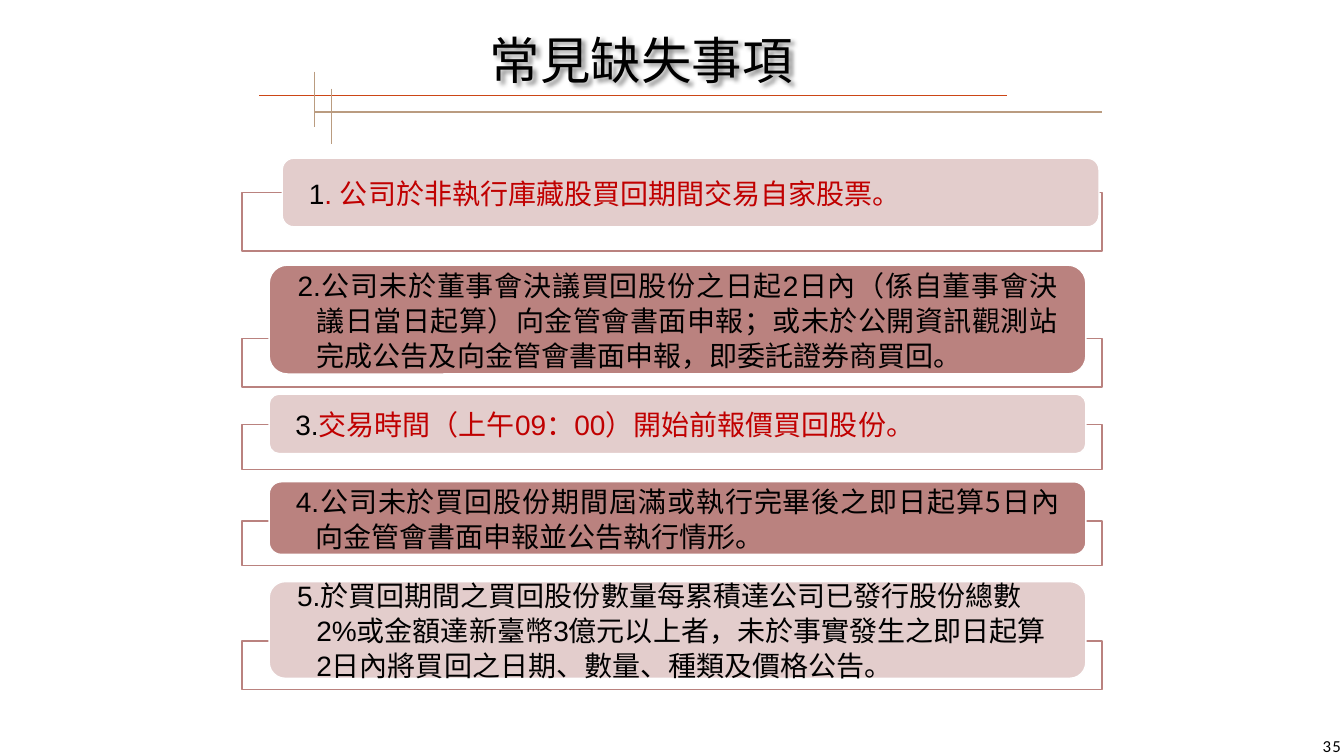
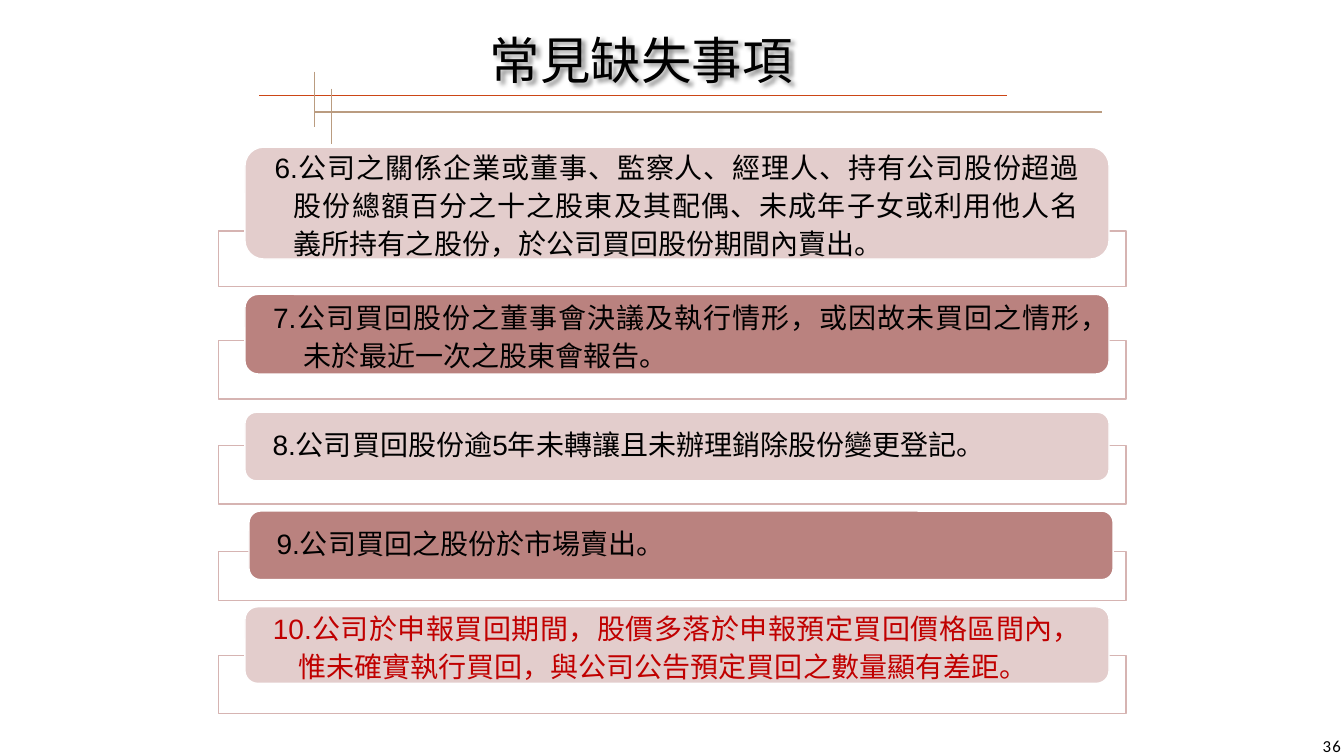
from dataclasses import dataclass
from typing import NamedTuple

from lxml import etree
from pptx import Presentation
from pptx import util as u
from pptx.dml.color import RGBColor
from pptx.enum import shapes, text
from pptx.oxml import ns

BLACK = RGBColor(0x00, 0x00, 0x00)
WHITE = RGBColor(0xFF, 0xFF, 0xFF)
RED = RGBColor(0xC0, 0x00, 0x00)
ROSE = RGBColor(0xBA, 0x82, 0x7F)
PALE_ROSE = RGBColor(0xE3, 0xCD, 0xCC)
FRAME_ROSE = RGBColor(0xD6, 0xB4, 0xB2)
TAN = RGBColor(0xBA, 0x9C, 0x80)
RUST = RGBColor(0xCC, 0x46, 0x16)

LATIN_FONT = "Arial"
TITLE_FONT = "Noto Sans CJK SC"
ASIAN_FONT = "Noto Sans CJK TC"
TITLE = "常見缺失事項"
JUSTIFY = text.PP_ALIGN.JUSTIFY
LEFT = text.PP_ALIGN.LEFT


class Span(NamedTuple):
    words: str
    color: RGBColor = BLACK
    font: str = LATIN_FONT


class Rule(NamedTuple):
    start: tuple[float, float]
    end: tuple[float, float]
    color: RGBColor


@dataclass(frozen=True)
class Item:
    """One fault: a rounded box in front of an outlined frame."""
    frame_top: float
    frame_height: float
    top: float
    height: float
    spans: tuple[Span, ...]
    shift: float = 0
    hang: float = 0.19
    align: text.PP_ALIGN = JUSTIFY
    leading: float | None = None


@dataclass(frozen=True)
class Sheet:
    number: int
    frame_left: float
    frame_width: float
    frame_color: RGBColor
    box_left: float
    box_width: float
    inset: float
    leading: u.Length
    items: tuple[Item, ...]


# Crossed lines under every title
RULES = (
    Rule((3.12, 1.11), (10.93, 1.11), TAN),
    Rule((2.57, 0.95), (9.99, 0.95), RUST),
    Rule((3.12, 0.71), (3.12, 1.26), TAN),
    Rule((3.29, 0.88), (3.29, 1.43), TAN),
)

SHEETS = (
    Sheet(35, 2.4, 8.53, ROSE, 2.67, 8.1, 0.23, u.Pt(25), (
        Item(1.91, 0.58, 1.57, 0.68, (
            Span("1"), Span(". 公司於非執行庫藏股買回期間交易自家股票。", RED)),
            shift=0.13),
        Item(3.36, 0.48, 2.63, 1.08, (
            Span("2.公司未於董事會決議買回股份之日起2日內（係自董事會決議日當日起算）"
                 "向金管會書面申報；或未於公開資訊觀測站完成公告及向金管會書面申報，"
                 "即委託證券商買回。"),)),
        Item(4.21, 0.45, 3.91, 0.59, (
            Span("3."), Span("交易時間（上午09：00）開始前報價買回股份。", RED))),
        Item(5.17, 0.44, 4.78, 0.72, (
            Span("4."),
            Span("公司未於買回股份期間屆滿或執行完畢後之即日起算5日內"
                 "向金管會書面申報並公告執行情形。", font=TITLE_FONT))),
        Item(6.36, 0.48, 5.77, 0.96, (
            Span("5.於買回期間之買回股份數量每累積達公司已發行股份總數2%或金額達"
                 "新臺幣3億元以上者，未於事實發生之即日起算2日內將買回之日期、數量、"
                 "種類及價格公告。"),), align=LEFT),
    )),
    Sheet(36, 2.17, 9, FRAME_ROSE, 2.43, 8.57, 0.24, u.Pt(27), (
        Item(2.29, 0.55, 1.46, 1.11, (
            Span("6.公司之關係企業或董事、監察人、經理人、持有公司股份超過股份總額"
                 "百分之十之股東及其配偶、未成年子女或利用他人名義所持有之股份，"
                 "於公司買回股份期間內賣出。"),)),
        Item(3.38, 0.58, 2.92, 0.79, (
            Span("7.公司買回股份之董事會決議及執行情形，或因故未買回之情形，"
                 "未於最近一次之股東會報告。"),), hang=0.3),
        Item(4.42, 0.58, 4.09, 0.68, (
            Span("8.公司買回股份逾5年未轉讓且未辦理銷除股份變更登記。"),),
            hang=0, align=LEFT, leading=0.9),
        Item(5.47, 0.49, 5.07, 0.68, (Span("9.公司買回之股份於市場賣出。"),),
             shift=0.04, hang=0, align=LEFT, leading=0.9),
        Item(6.5, 0.58, 6.02, 0.76, (
            Span("10.公司於申報買回期間，股價多落於申報預定買回價格區間內，"
                 "惟未確實執行買回，與公司公告預定買回之數量顯有差距。", RED),),
            hang=0.25),
    )),
)


def write(frame, spans: tuple[Span, ...], *, size: float, align: text.PP_ALIGN,
          inset: float = 0, hang: float = 0,
          leading: float | u.Length | None = None,
          asian: str = ASIAN_FONT) -> None:
    """Fill a text frame with one formatted paragraph, centred in height."""
    frame.word_wrap = True
    frame.auto_size = text.MSO_AUTO_SIZE.NONE
    frame.vertical_anchor = text.MSO_ANCHOR.MIDDLE
    frame.margin_left = frame.margin_right = u.Inches(inset)
    frame.margin_top = frame.margin_bottom = 0
    para = frame.paragraphs[0]
    para.alignment = align
    para.line_spacing = leading
    if hang:
        properties = para._p.get_or_add_pPr()
        properties.set("marL", str(u.Inches(hang)))
        properties.set("indent", str(-u.Inches(hang)))
    for words, color, font in spans:
        span = para.add_run()
        span.text = words
        span.font.size = u.Pt(size)
        span.font.color.rgb = color
        span.font.name = font
        latin = span._r.rPr.find(ns.qn("a:latin"))
        latin.addnext(latin.makeelement(ns.qn("a:ea"), {"typeface": asian}))


def add_block(page, kind: shapes.MSO_SHAPE, left: float, top: float, width: float,
              height: float, fill: RGBColor, line: RGBColor):
    block = page.shapes.add_shape(kind, u.Inches(left), u.Inches(top),
                                  u.Inches(width), u.Inches(height))
    block.shadow.inherit = False
    block.fill.solid()
    block.fill.fore_color.rgb = fill
    block.line.color.rgb = line
    block.line.width = u.Pt(1)
    return block


def add_item(page, sheet: Sheet, item: Item, fill: RGBColor) -> None:
    add_block(page, shapes.MSO_SHAPE.RECTANGLE, sheet.frame_left, item.frame_top,
              sheet.frame_width, item.frame_height, WHITE, sheet.frame_color)
    box = add_block(page, shapes.MSO_SHAPE.ROUNDED_RECTANGLE,
                    sheet.box_left + item.shift, item.top,
                    sheet.box_width, item.height, fill, WHITE)
    write(box.text_frame, item.spans, size=20, align=item.align, inset=sheet.inset,
          hang=item.hang, leading=item.leading or sheet.leading)


def add_rule(page, rule: Rule) -> None:
    line = page.shapes.add_connector(
        shapes.MSO_CONNECTOR.STRAIGHT,
        *(u.Inches(value) for value in rule.start + rule.end))
    line.line.color.rgb = rule.color
    line.line.width = u.Pt(1)
    etree.SubElement(line._element.spPr, ns.qn("a:effectLst"))


def add_title(page) -> None:
    title = page.shapes.title
    title.left, title.top = u.Inches(2.73), u.Inches(0.23)
    title.width, title.height = u.Inches(7.26), u.Inches(0.71)
    write(title.text_frame, (Span(TITLE, font=TITLE_FONT),), size=36,
          align=text.PP_ALIGN.CENTER, asian=TITLE_FONT)
    # Soft shadow to the lower right
    effects = etree.SubElement(title._element.spPr, ns.qn("a:effectLst"))
    shadow = etree.SubElement(effects, ns.qn("a:outerShdw"), blurRad="38100",
                              dist="38100", dir="2700000", algn="tl")
    color = etree.SubElement(shadow, ns.qn("a:srgbClr"), val=str(BLACK))
    etree.SubElement(color, ns.qn("a:alpha"), val="43000")


def add_number(page, number: int) -> None:
    box = page.shapes.add_textbox(u.Inches(12.7), u.Inches(7.3),
                                  u.Inches(0.6), u.Inches(0.2))
    write(box.text_frame, (Span(str(number), font="Calibri"),), size=12,
          align=text.PP_ALIGN.RIGHT)
    box.text_frame.paragraphs[0].runs[0]._r.rPr.set("spc", "100")


def add_sheet(deck, sheet: Sheet) -> None:
    page = deck.slides.add_slide(deck.slide_layouts.get_by_name("Title Only"))
    # Boxes alternate between pale and dark
    for index, item in enumerate(sheet.items):
        add_item(page, sheet, item, ROSE if index % 2 else PALE_ROSE)
    for rule in RULES:
        add_rule(page, rule)
    add_title(page)
    add_number(page, sheet.number)


def main() -> None:
    deck = Presentation()
    deck.slide_width, deck.slide_height = u.Inches(13.33), u.Inches(7.5)
    for sheet in SHEETS:
        add_sheet(deck, sheet)
    deck.save("out.pptx")


if __name__ == "__main__":
    main()
